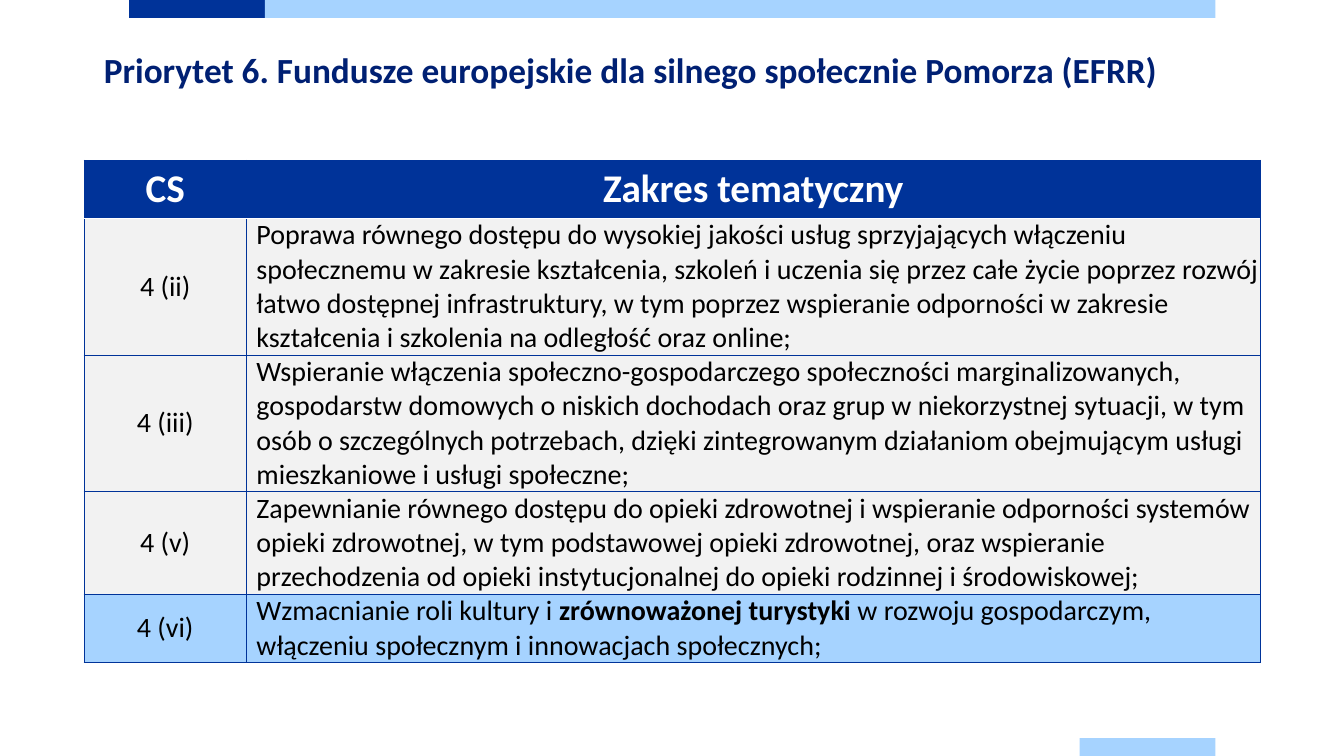
"""Build the slide on Priority 6 with its table of specific goals."""
from dataclasses import dataclass

from lxml import etree
from pptx import Presentation
from pptx.dml.color import RGBColor
from pptx.enum.shapes import MSO_SHAPE
from pptx.enum.text import MSO_ANCHOR, PP_ALIGN
from pptx.oxml.ns import qn
from pptx.util import Pt

RECT = MSO_SHAPE.RECTANGLE
TOP, MIDDLE = MSO_ANCHOR.TOP, MSO_ANCHOR.MIDDLE
LEFT, CENTER = PP_ALIGN.LEFT, PP_ALIGN.CENTER


@dataclass(frozen=True)
class Theme:
    """Hold the colours and type sizes."""
    font: str = "Calibri"
    navy: str = "002073"
    blue: str = "003399"
    sky: str = "A6D3FF"
    grey: str = "F2F2F2"
    white: str = "FFFFFF"
    black: str = "000000"
    title: float = 25.2
    head: float = 28
    body: float = 20


@dataclass(frozen=True)
class Bar:
    """Describe a coloured bar."""
    left: float
    top: float
    width: float
    fill: str


@dataclass(frozen=True)
class Row:
    """Describe a table row; odd parts of the scope are bold."""
    code: str
    scope: tuple[str, ...]
    height: float
    fill: str


THEME = Theme()
BARS = [
    Bar(92.2, 0, 97, THEME.blue),
    Bar(189.2, 0, 679, THEME.sky),
    Bar(771.2, 527.2, 97, THEME.sky),
]
HEAD = Row("CS", ("Zakres tematyczny",), 41.4, THEME.blue)
ROWS = [
    Row("4 (ii)", ("Poprawa równego dostępu do wysokiej jakości usług sprzyjających "
                   "włączeniu społecznemu w zakresie kształcenia, szkoleń i uczenia się "
                   "przez całe życie poprzez rozwój łatwo dostępnej infrastruktury, w tym "
                   "poprzez wspieranie odporności w zakresie kształcenia i szkolenia na "
                   "odległość oraz online;",), 97.7, THEME.grey),
    Row("4 (iii)", ("Wspieranie włączenia społeczno-gospodarczego społeczności "
                    "marginalizowanych, gospodarstw domowych o niskich dochodach oraz grup "
                    "w niekorzystnej sytuacji, w tym osób o szczególnych potrzebach, dzięki "
                    "zintegrowanym działaniom obejmującym usługi mieszkaniowe i usługi "
                    "społeczne;",), 97.7, THEME.grey),
    Row("4 (v)", ("Zapewnianie równego dostępu do opieki zdrowotnej i wspieranie "
                  "odporności systemów opieki zdrowotnej, w tym podstawowej opieki "
                  "zdrowotnej, oraz wspieranie przechodzenia od opieki instytucjonalnej "
                  "do opieki rodzinnej i środowiskowej;",), 73.2, THEME.grey),
    Row("4 (vi)", ("Wzmacnianie roli kultury i ", "zrównoważonej turystyki ",
                   "w rozwoju gospodarczym, włączeniu społecznym i innowacjach "
                   "społecznych;"), 48.8, THEME.sky),
]


def set_font(font, size: float, color: str, bold: bool) -> None:
    """Set the face, size, colour and weight of a font."""
    font.name, font.size, font.bold = THEME.font, Pt(size), bold
    font.color.rgb = RGBColor.from_string(color)


def draw_bar(slide, bar: Bar) -> None:
    """Draw one bar without a line."""
    shape = slide.shapes.add_shape(RECT, Pt(bar.left), Pt(bar.top), Pt(bar.width), Pt(12.8))
    shape.shadow.inherit = False
    shape.fill.solid()
    shape.fill.fore_color.rgb = RGBColor.from_string(bar.fill)
    shape.line.fill.background()


def draw_title(slide, text: str) -> None:
    """Draw the slide title."""
    frame = slide.shapes.add_textbox(Pt(74.2), Pt(33.8), Pt(811.4), Pt(77)).text_frame
    frame.word_wrap, frame.vertical_anchor = True, TOP
    frame.margin_left = frame.margin_right = frame.margin_top = frame.margin_bottom = 0
    line = frame.paragraphs[0]
    line.text, line.line_spacing = text, Pt(30.8)
    set_font(line.font, THEME.title, THEME.navy, True)


def add_edge(cell, side: str, color: str, width: float) -> None:
    """Add a border to one side of a cell."""
    edge = etree.SubElement(cell._tc.get_or_add_tcPr(), qn(f"a:ln{side}"), w=str(Pt(width)))
    fill = etree.SubElement(edge, qn("a:solidFill"))
    etree.SubElement(fill, qn("a:srgbClr"), val=color)


def fill_cell(cell, parts: tuple[str, ...], row: Row, index: int, col: int) -> None:
    """Write, border and fill one cell."""
    head = index == 0
    for side in "LRTB":
        seam = (side, index) in (("B", 0), ("T", 1))
        add_edge(cell, side, THEME.white if seam else THEME.blue, 1 if seam else 0.5)
    cell.fill.solid()
    cell.fill.fore_color.rgb = RGBColor.from_string(row.fill)
    cell.vertical_anchor = MIDDLE
    if col:
        cell.margin_left = 0 if head else Pt(7.2)
        cell.margin_right = cell.margin_top = cell.margin_bottom = 0
    line = cell.text_frame.paragraphs[0]
    line.alignment = CENTER if head or not col else LEFT
    for place, part in enumerate(parts):
        run = line.add_run()
        run.text = part
        if place % 2:
            run.font.bold = True
    set_font(line.font, THEME.head if head else THEME.body,
             THEME.white if head else THEME.black, head)


def draw_table(slide, rows: list[Row]) -> None:
    """Draw the table of goals."""
    widths = (116, 724)
    height = sum(row.height for row in rows)
    table = slide.shapes.add_table(len(rows), len(widths), Pt(60), Pt(114.4),
                                   Pt(sum(widths)), Pt(height)).table
    table.first_row = table.horz_banding = False
    for col, width in enumerate(widths):
        table.columns[col].width = Pt(width)
    for index, row in enumerate(rows):
        table.rows[index].height = Pt(row.height)
        for col, parts in enumerate(((row.code,), row.scope)):
            fill_cell(table.cell(index, col), parts, row, index, col)


def main() -> None:
    """Build and save the slide."""
    deck = Presentation()
    deck.slide_width, deck.slide_height = Pt(960), Pt(540)
    slide = deck.slides.add_slide(deck.slide_layouts[6])
    for bar in BARS:
        draw_bar(slide, bar)
    draw_title(slide, "Priorytet 6. Fundusze europejskie dla silnego społecznie Pomorza (EFRR)")
    draw_table(slide, [HEAD, *ROWS])
    deck.save("out.pptx")


if __name__ == "__main__":
    main()
